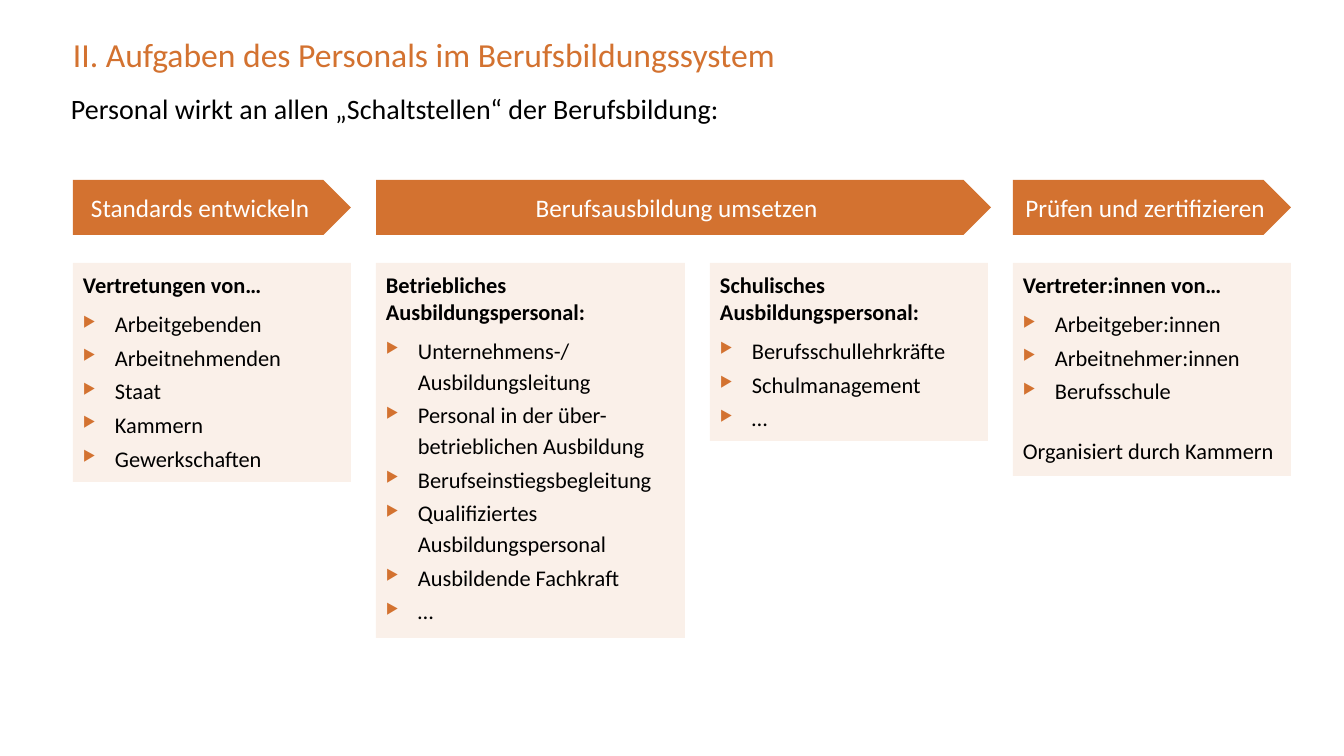
from dataclasses import dataclass

from lxml import etree
from pptx import Presentation
from pptx import util as u
from pptx.dml.color import RGBColor
from pptx.enum import shapes, text
from pptx.oxml.ns import qn

SCALE = u.Inches(1) / 100.8


@dataclass(frozen=True)
class Theme:
    font: str = "Calibri"
    accent: str = "D37230"
    ink: str = "000000"
    paper: str = "FFFFFF"
    tint_percent: int = 10
    title: int = 24
    subtitle: int = 20
    step: int = 18
    body: int = 16


THEME = Theme()

# left, width, label, left inset
STEPS = [
    (73, 278, "Standards entwickeln", 0),
    (376, 615, "Berufsausbildung umsetzen", 10),
    (1013, 278, "Prüfen und zertifizieren", 10),
]

# left, width, height, heading, bullet items, closing line
PANELS = [
    (73, 278, 219, "Vertretungen von…",
     ["Arbeitgebenden", "Arbeitnehmenden", "Staat", "Kammern", "Gewerkschaften"], None),
    (376, 309, 375, "Betriebliches Ausbildungspersonal:",
     ["Unternehmens-/ Ausbildungsleitung", "Personal in der über-betrieblichen Ausbildung",
      "Berufseinstiegsbegleitung", "Qualifiziertes Ausbildungspersonal",
      "Ausbildende Fachkraft", "…"], None),
    (710, 278, 178, "Schulisches Ausbildungspersonal:",
     ["Berufsschullehrkräfte", "Schulmanagement", "…"], None),
    (1013, 278, 213, "Vertreter:innen von…",
     ["Arbeitgeber:innen", "Arbeitnehmer:innen", "Berufsschule"],
     "Organisiert durch Kammern"),
]


def px(length):
    return u.Emu(round(length * SCALE))


def set_frame(shape, insets, anchor=text.MSO_ANCHOR.TOP):
    """Wrap the text and set left, top, right and bottom insets in px."""
    frame = shape.text_frame
    frame.word_wrap = True
    frame.vertical_anchor = anchor
    (frame.margin_left, frame.margin_top,
     frame.margin_right, frame.margin_bottom) = map(px, insets)
    return frame


def write(para, words, size, color, bold=False, align=text.PP_ALIGN.LEFT):
    para.text = words
    para.alignment = align
    for span in para.runs:
        span.font.name = THEME.font
        span.font.size = u.Pt(size)
        span.font.bold = bold
        span.font.color.rgb = RGBColor.from_string(color)


def add_filled(page, kind, box, color):
    shape = page.shapes.add_shape(kind, *map(px, box))
    shape.shadow.inherit = False
    shape.fill.solid()
    shape.fill.fore_color.rgb = RGBColor.from_string(color)
    shape.line.fill.background()
    return shape


def add_bullet(para):
    props = para._p.get_or_add_pPr()
    props.set("marL", str(px(32)))
    props.set("indent", str(-px(32)))
    tint = etree.SubElement(props, qn("a:buClr"))
    etree.SubElement(tint, qn("a:srgbClr"), val=THEME.accent)
    etree.SubElement(props, qn("a:buSzPct"), val="65000")
    etree.SubElement(props, qn("a:buChar"), char="▶")


def add_heading(page, box, words, size, color, insets):
    label = page.shapes.add_textbox(*map(px, box))
    write(set_frame(label, insets).paragraphs[0], words, size, color)


def add_step(page, box, words, left_inset):
    arrow = add_filled(page, shapes.MSO_SHAPE.PENTAGON, box, THEME.accent)
    frame = set_frame(arrow, (left_inset, 5, 10, 5), text.MSO_ANCHOR.MIDDLE)
    write(frame.paragraphs[0], words, THEME.step, THEME.paper, align=text.PP_ALIGN.CENTER)


def add_panel(page, box, heading, items, closing):
    panel = add_filled(page, shapes.MSO_SHAPE.RECTANGLE, box, THEME.accent)
    color = panel._element.spPr.find(qn("a:solidFill"))[0]
    etree.SubElement(color, qn("a:alpha"), val=str(THEME.tint_percent * 1000))
    frame = set_frame(panel, (10, 8, 10, 12))
    frame.auto_size = text.MSO_AUTO_SIZE.SHAPE_TO_FIT_TEXT

    para = frame.paragraphs[0]
    write(para, heading, THEME.body, THEME.ink, bold=True)
    para.space_after = u.Pt(6)
    for item in items:
        para = frame.add_paragraph()
        add_bullet(para)
        write(para, item, THEME.body, THEME.ink)
        para.line_spacing = u.Pt(22)
        para.space_after = u.Pt(2)
    if closing:
        para = frame.add_paragraph()
        write(para, closing, THEME.body, THEME.ink)
        para.space_before = u.Pt(21.5)
        para.space_after = u.Pt(2)


def build_page(page):
    add_heading(page, (73, 34, 992, 49), "II. Aufgaben des Personals im Berufsbildungssystem",
                THEME.title, THEME.accent, (0, 0, 0, 0))
    add_heading(page, (61, 86, 830, 44),
                "Personal wirkt an allen „Schaltstellen“ der Berufsbildung:",
                THEME.subtitle, THEME.ink, (10, 5, 10, 5))
    for left, width, words, left_inset in STEPS:
        add_step(page, (left, 180, width, 55), words, left_inset)
    for left, width, height, *content in PANELS:
        add_panel(page, (left, 263, width, height), *content)


def main():
    deck = Presentation()
    deck.slide_width, deck.slide_height = px(1344), px(756)
    build_page(deck.slides.add_slide(deck.slide_layouts[6]))
    deck.save("out.pptx")


if __name__ == "__main__":
    main()
